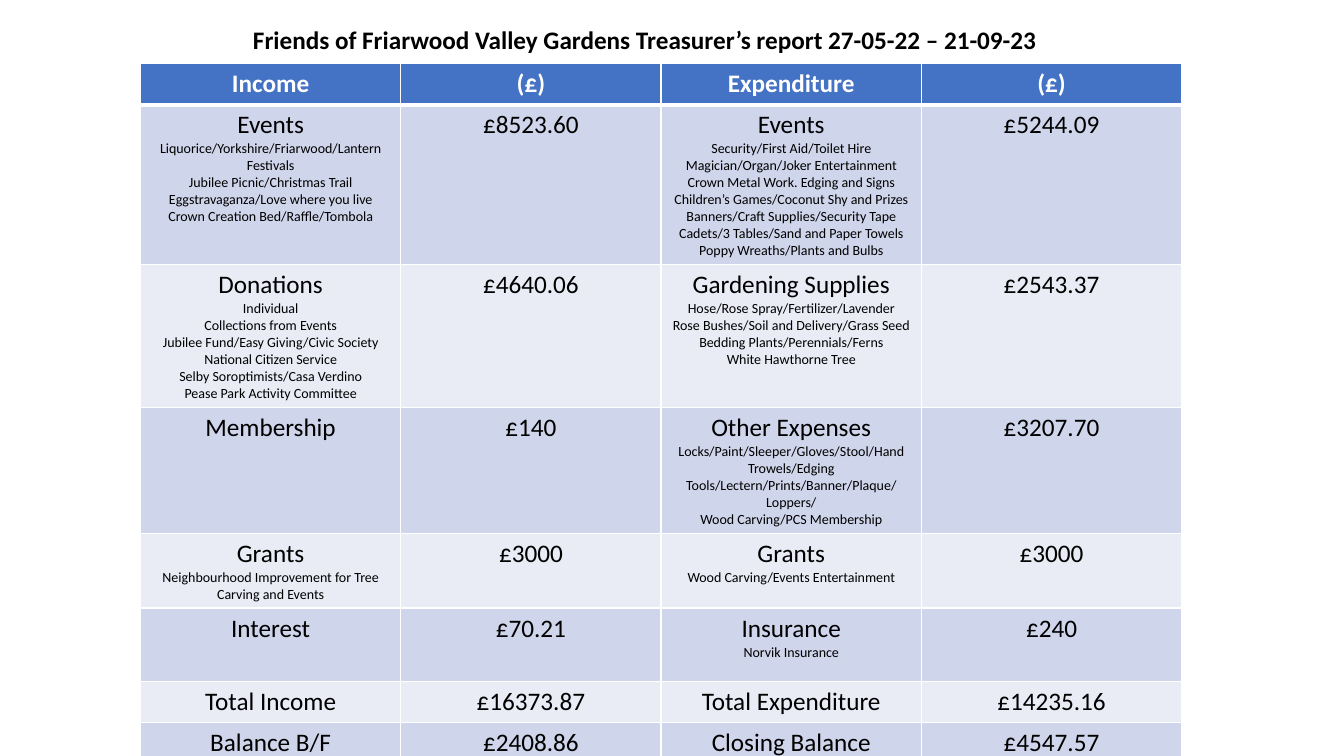
from lxml import etree
from pptx import Presentation
from pptx.dml.color import RGBColor
from pptx.enum.text import MSO_ANCHOR, MSO_AUTO_SIZE, PP_ALIGN
from pptx.oxml.ns import qn
from pptx.util import Cm, Pt

CENTER = PP_ALIGN.CENTER
TOP = MSO_ANCHOR.TOP
NO_AUTOFIT = MSO_AUTO_SIZE.NONE

# Content: each cell is a list of lines, a heading followed by its details
TITLE = "Friends of Friarwood Valley Gardens Treasurer’s report 27-05-22 – 21-09-23"
ROWS = [
    [["Income"], ["(£)"], ["Expenditure"], ["(£)"]],
    [
        ["Events", "Liquorice/Yorkshire/Friarwood/Lantern Festivals",
         "Jubilee Picnic/Christmas Trail", "Eggstravaganza/Love where you live",
         "Crown Creation Bed/Raffle/Tombola"],
        ["£8523.60"],
        ["Events", "Security/First Aid/Toilet Hire", "Magician/Organ/Joker Entertainment",
         "Crown Metal Work. Edging and Signs", "Children’s Games/Coconut Shy and Prizes",
         "Banners/Craft Supplies/Security Tape", "Cadets/3 Tables/Sand and Paper Towels",
         "Poppy Wreaths/Plants and Bulbs"],
        ["£5244.09"],
    ],
    [
        ["Donations", "Individual", "Collections from Events",
         "Jubilee Fund/Easy Giving/Civic Society", "National Citizen Service",
         "Selby Soroptimists/Casa Verdino", "Pease Park Activity Committee"],
        ["£4640.06"],
        ["Gardening Supplies", "Hose/Rose Spray/Fertilizer/Lavender",
         "Rose Bushes/Soil and Delivery/Grass Seed", "Bedding Plants/Perennials/Ferns",
         "White Hawthorne Tree"],
        ["£2543.37"],
    ],
    [
        ["Membership"],
        ["£140"],
        ["Other Expenses",
         "Locks/Paint/Sleeper/Gloves/Stool/Hand Trowels/Edging "
         "Tools/Lectern/Prints/Banner/Plaque/",
         "Loppers/", "Wood Carving/PCS Membership"],
        ["£3207.70"],
    ],
    [
        ["Grants", "Neighbourhood Improvement for Tree Carving and Events"],
        ["£3000"],
        ["Grants", "Wood Carving/Events Entertainment"],
        ["£3000"],
    ],
    [["Interest"], ["£70.21"], ["Insurance", "Norvik Insurance"], ["£240"]],
    [["Total Income"], ["£16373.87"], ["Total Expenditure"], ["£14235.16"]],
    [["Balance B/F"], ["£2408.86"], ["Closing Balance"], ["£4547.57"]],
]
ROW_HEIGHTS = [1.01, 3.98, 3.55, 3.15, 1.86, 1.86, 1.01, 1.01]
COLUMN_WIDTH = 6.56
FONT = "Calibri"
HEADING_SIZE, DETAIL_SIZE = 18, 10
COLORS = {
    "header": "4472C4",
    "odd": "CFD5EA",
    "even": "E9EBF5",
    "border": "FFFFFF",
    "header text": "FFFFFF",
    "text": "000000",
}


def format_paragraph(paragraph, size, color, bold):
    paragraph.alignment = CENTER
    font = paragraph.font
    font.name, font.size, font.bold = FONT, Pt(size), bold
    font.color.rgb = RGBColor.from_string(COLORS[color])


def add_borders(cell, top, bottom):
    properties = cell._tc.get_or_add_tcPr()
    for side, width in (("L", 1), ("R", 1), ("T", top), ("B", bottom)):
        line = etree.SubElement(properties, qn(f"a:ln{side}"), w=str(Pt(width)))
        fill = etree.SubElement(line, qn("a:solidFill"))
        etree.SubElement(fill, qn("a:srgbClr"), val=COLORS["border"])


def fill_cell(cell, lines, row_index):
    is_header = row_index == 0
    add_borders(cell, 3 if row_index == 1 else 1, 3 if is_header else 1)
    band = "header" if is_header else ("even", "odd")[row_index % 2]
    cell.fill.solid()
    cell.fill.fore_color.rgb = RGBColor.from_string(COLORS[band])
    cell.text = "\n".join(lines)
    for index, paragraph in enumerate(cell.text_frame.paragraphs):
        size = DETAIL_SIZE if index else HEADING_SIZE
        format_paragraph(paragraph, size, "header text" if is_header else "text", is_header)


presentation = Presentation()
presentation.slide_width, presentation.slide_height = Cm(33.87), Cm(19.05)
slide = presentation.slides.add_slide(presentation.slide_layouts[5])

# Title
title = slide.shapes.title
title.left, title.top, title.width, title.height = Cm(2.74), Cm(0.48), Cm(27.03), Cm(1.02)
title.text = TITLE
title.text_frame.auto_size = NO_AUTOFIT
title.text_frame.vertical_anchor = TOP
format_paragraph(title.text_frame.paragraphs[0], HEADING_SIZE, "text", True)

# Accounts table
column_count = len(ROWS[0])
table = slide.shapes.add_table(
    len(ROWS), column_count, Cm(3.54), Cm(1.61),
    Cm(COLUMN_WIDTH * column_count), Cm(sum(ROW_HEIGHTS)),
).table
for column in table.columns:
    column.width = Cm(COLUMN_WIDTH)
for row_index, (cells, height) in enumerate(zip(ROWS, ROW_HEIGHTS)):
    table.rows[row_index].height = Cm(height)
    for column_index, lines in enumerate(cells):
        fill_cell(table.cell(row_index, column_index), lines, row_index)

presentation.save("out.pptx")
